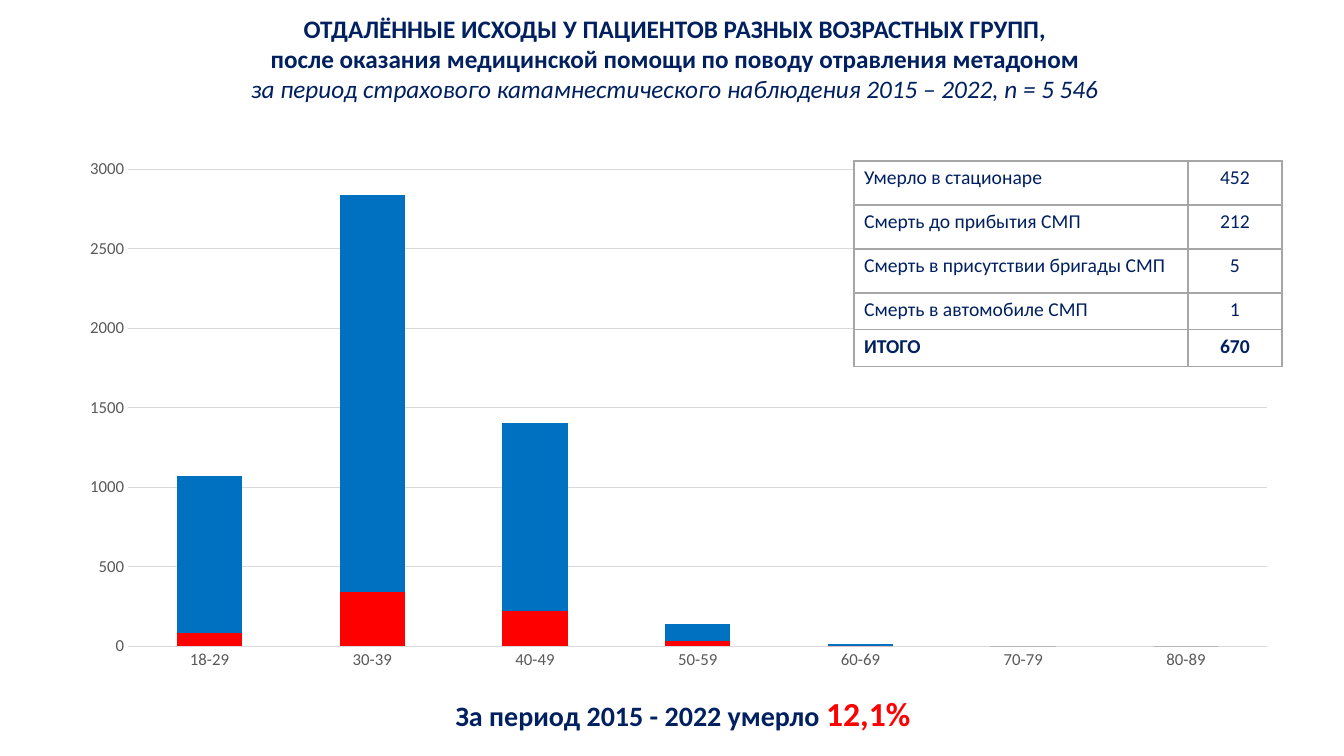
from dataclasses import dataclass

from lxml import etree
from pptx import Presentation
from pptx.chart.data import CategoryChartData
from pptx.dml.color import RGBColor
from pptx.enum.chart import XL_CHART_TYPE, XL_TICK_MARK
from pptx.enum.text import PP_ALIGN
from pptx.oxml import parse_xml
from pptx.oxml.ns import nsdecls, qn
from pptx.util import Pt

STACKED = XL_CHART_TYPE.COLUMN_STACKED
NO_TICKS = XL_TICK_MARK.NONE
LEFT, CENTER = PP_ALIGN.LEFT, PP_ALIGN.CENTER
PX = 914400 / 100.8


@dataclass(frozen=True)
class Theme:
    font: str = "Calibri"
    navy: str = "002060"
    red: str = "FF0000"
    blue: str = "0070C0"
    white: str = "FFFFFF"
    axis_text: str = "595959"
    grid: str = "D9D9D9"
    border: str = "A6A6A6"
    title_size: int = 18
    table_size: int = 14
    axis_size: int = 12
    summary_size: int = 20
    share_size: int = 24


theme = Theme()


def px(*lengths):
    return [round(length * PX) for length in lengths]


def write(paragraph, text, size, color=theme.navy, bold=False, italic=False, align=CENTER):
    paragraph.alignment = align
    run = paragraph.add_run()
    run.text = text
    run.font.name = theme.font
    run.font.size = Pt(size)
    run.font.bold = bold
    run.font.italic = italic
    run.font.color.rgb = RGBColor.from_string(color)


presentation = Presentation()
presentation.slide_width, presentation.slide_height = px(1344, 756)
slide = presentation.slides.add_slide(presentation.slide_layouts[6])

age_groups = ["18-29", "30-39", "40-49", "50-59", "60-69", "70-79", "80-89"]
outcomes = [
    ("Series 1", [80, 340, 220, 30, 0, 0, 0], theme.red),
    ("Series 2", [990, 2500, 1180, 110, 10, 0, 0], theme.blue),
]
outcome_data = CategoryChartData()
outcome_data.categories = age_groups
for name, counts, color in outcomes:
    outcome_data.add_series(name, counts)

chart = slide.shapes.add_chart(STACKED, *px(67, 148, 1225, 530), outcome_data).chart
chart.has_legend = False
chart.has_title = False
chart.font.name = theme.font
chart.font.size = Pt(theme.axis_size)
chart.font.color.rgb = RGBColor.from_string(theme.axis_text)

bars = chart.plots[0]
bars.gap_width = 150
bars.overlap = 100
bars.vary_by_categories = False
for series, (name, counts, color) in zip(bars.series, outcomes):
    series.format.fill.solid()
    series.format.fill.fore_color.rgb = RGBColor.from_string(color)

age_axis, count_axis = chart.category_axis, chart.value_axis
for axis in (age_axis, count_axis):
    axis.major_tick_mark = NO_TICKS
    axis.minor_tick_mark = NO_TICKS
count_axis.minimum_scale = 0
count_axis.maximum_scale = 3000
count_axis.major_unit = 500
count_axis.has_major_gridlines = True
count_axis.format.line.fill.background()
for line in (age_axis.format.line, count_axis.major_gridlines.format.line):
    line.color.rgb = RGBColor.from_string(theme.grid)
    line.width = Pt(0.75)

plot_area = bars._element.getparent()
for stale_layout in plot_area.findall(qn("c:layout")):
    plot_area.remove(stale_layout)
plot_area.insert(0, parse_xml(
    f'<c:layout {nsdecls("c")}><c:manualLayout><c:layoutTarget val="inner"/>'
    '<c:xMode val="edge"/><c:yMode val="edge"/><c:x val="0.05"/><c:y val="0.04"/>'
    '<c:w val="0.93"/><c:h val="0.9"/></c:manualLayout></c:layout>'
))

deaths = [
    ("Умерло в стационаре", "452"),
    ("Смерть до прибытия СМП", "212"),
    ("Смерть в присутствии бригады СМП", "5"),
    ("Смерть в автомобиле СМП", "1"),
    ("ИТОГО", "670"),
]
death_table = slide.shapes.add_table(len(deaths), 2, *px(854, 161, 428, 206)).table
for column, width in zip(death_table.columns, px(334, 94)):
    column.width = width
for row, height in zip(death_table.rows, px(44, 44, 44, 37, 37)):
    row.height = height

for row_index, entry in enumerate(deaths):
    for column_index, text in enumerate(entry):
        cell = death_table.cell(row_index, column_index)
        write(cell.text_frame.paragraphs[0], text, theme.table_size,
              bold=row_index == len(deaths) - 1,
              align=CENTER if column_index else LEFT)
        cell.fill.solid()
        cell.fill.fore_color.rgb = RGBColor.from_string(theme.white)
        cell_properties = cell._tc.get_or_add_tcPr()
        for position, side in enumerate(("a:lnL", "a:lnR", "a:lnT", "a:lnB")):
            edge = etree.Element(qn(side), w=str(Pt(1)))
            edge_fill = etree.SubElement(edge, qn("a:solidFill"))
            etree.SubElement(edge_fill, qn("a:srgbClr"), val=theme.border)
            cell_properties.insert(position, edge)

summary = slide.shapes.add_textbox(*px(92, 688, 1182, 50)).text_frame
summary.word_wrap = True
summary_line = summary.paragraphs[0]
write(summary_line, "За период 2015 - 2022 умерло ", theme.summary_size, bold=True)
write(summary_line, "12,1%", theme.share_size, color=theme.red, bold=True)

title = slide.shapes.add_textbox(*px(67, 8, 1216, 102)).text_frame
title.word_wrap = True
write(title.paragraphs[0], "ОТДАЛЁННЫЕ ИСХОДЫ У ПАЦИЕНТОВ РАЗНЫХ ВОЗРАСТНЫХ ГРУПП,",
      theme.title_size, bold=True)
write(title.add_paragraph(), "после оказания медицинской помощи по поводу отравления метадоном",
      theme.title_size, bold=True)
write(title.add_paragraph(),
      "за период страхового катамнестического наблюдения 2015 – 2022, n = 5 546",
      theme.title_size, italic=True)

presentation.save("out.pptx")
